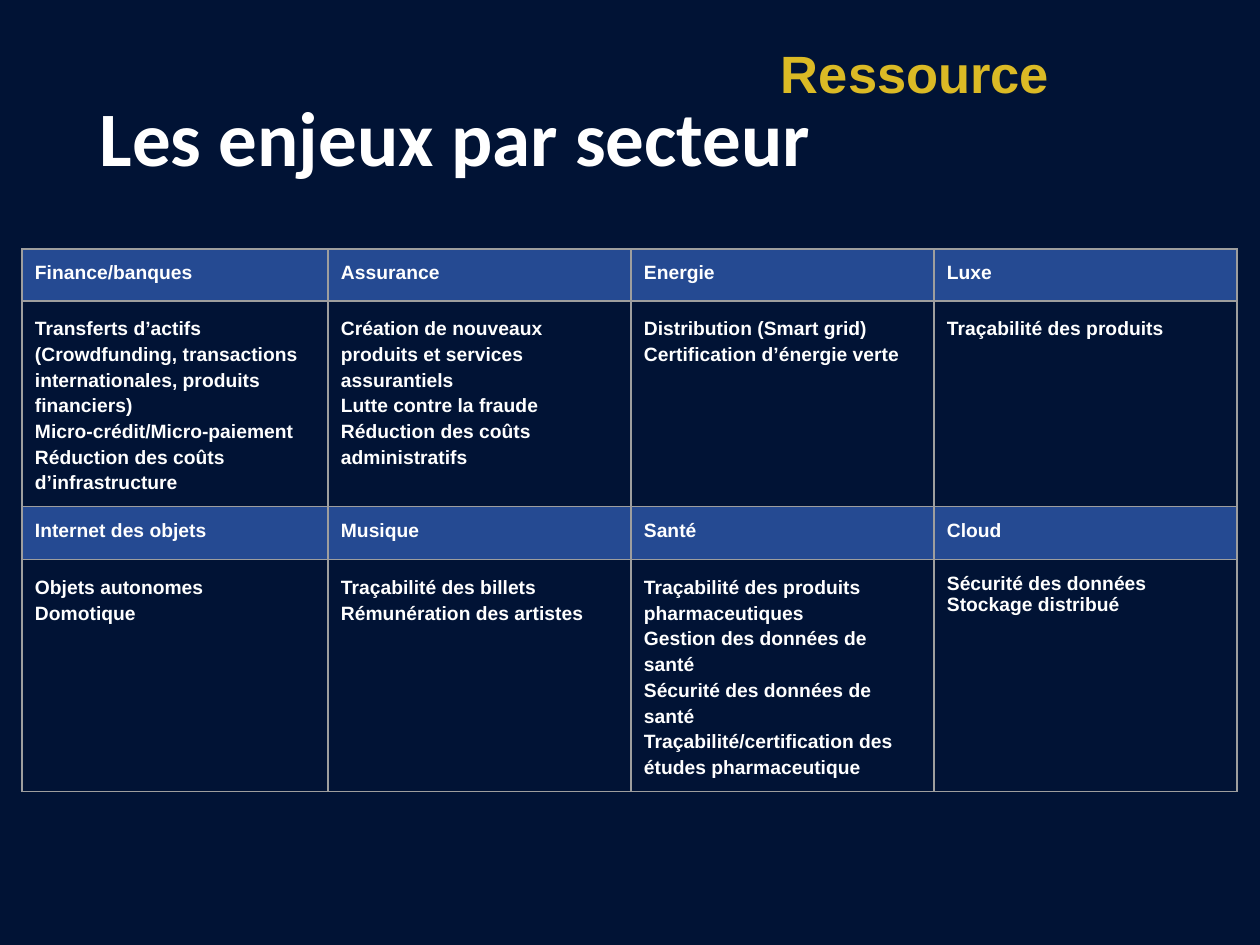
"""Build the slide on the stakes in each sector."""
from lxml import etree
from pptx import Presentation, util as u
from pptx.dml.color import RGBColor
from pptx.enum import text
from pptx.oxml.ns import qn

TITLE = "Les enjeux par secteur"
TAG = "Ressource"
SECTORS = [
    [
        ("Finance/banques", [
            "Transferts d’actifs (Crowdfunding, transactions internationales, produits financiers)",
            "Micro-crédit/Micro-paiement",
            "Réduction des coûts d’infrastructure"]),
        ("Assurance", [
            "Création de nouveaux produits et services assurantiels",
            "Lutte contre la fraude",
            "Réduction des coûts administratifs"]),
        ("Energie", ["Distribution (Smart grid)", "Certification d’énergie verte"]),
        ("Luxe", ["Traçabilité des produits"]),
    ],
    [
        ("Internet des objets", ["Objets autonomes", "Domotique"]),
        ("Musique", ["Traçabilité des billets", "Rémunération des artistes"]),
        ("Santé", [
            "Traçabilité des produits pharmaceutiques",
            "Gestion des données de santé",
            "Sécurité des données de santé",
            "Traçabilité/certification des études pharmaceutique"]),
        ("Cloud", ["Sécurité des données", "Stockage distribué"]),
    ],
]
TIGHT = "Cloud"
COLS = [306, 303, 303, 303]
ROWS = [52, 205, 53, 230]
HEX = {"back": "011335", "head": "254A92", "text": "FFFFFF", "tag": "DBBA25", "edge": "9E9E9E"}


def px(n):
    return u.Emu(round(n * 914400 / 126))


def tint(name):
    return RGBColor.from_string(HEX[name])


def style(frame, size, color="text", font="Arial", space=None):
    for para in frame.paragraphs:
        para.alignment = text.PP_ALIGN.LEFT
        if space:
            para.line_spacing = space
        for run in para.runs:
            run.font.name = font
            run.font.size = u.Pt(size)
            run.font.bold = True
            run.font.color.rgb = tint(color)


def pad(box, gap=13):
    box.margin_left = box.margin_right = box.margin_top = box.margin_bottom = px(gap)


def edge(cell):
    props = cell._tc.get_or_add_tcPr()
    for side in "LRTB":
        line = etree.SubElement(props, qn(f"a:ln{side}"), w=str(u.Pt(0.75)))
        fill = etree.SubElement(line, qn("a:solidFill"))
        etree.SubElement(fill, qn("a:srgbClr"), val=HEX["edge"])


def put(cell, words, head=False, space=None):
    cell.text_frame.text = words
    style(cell.text_frame, 11, space=space)
    pad(cell)
    edge(cell)
    if head:
        cell.fill.solid()
        cell.fill.fore_color.rgb = tint("head")
    else:
        cell.fill.background()


def add_grid(slide):
    frame = slide.shapes.add_table(len(ROWS), len(COLS), px(22), px(249),
                                   px(sum(COLS)), px(sum(ROWS)))
    grid = frame.table
    grid.first_row = grid.horz_banding = False
    for col, wide in zip(grid.columns, COLS):
        col.width = px(wide)
    for row, high in zip(grid.rows, ROWS):
        row.height = px(high)
    for band, group in enumerate(SECTORS):
        for col, (name, items) in enumerate(group):
            put(grid.cell(2 * band, col), name, head=True)
            put(grid.cell(2 * band + 1, col), "\n".join(items),
                space=None if name == TIGHT else 1.2)


def main():
    deck = Presentation()
    deck.slide_width, deck.slide_height = px(1260), px(945)
    slide = deck.slides.add_slide(deck.slide_layouts[5])
    slide.background.fill.solid()
    slide.background.fill.fore_color.rgb = tint("back")

    title = slide.shapes.title
    title.left, title.top, title.width, title.height = map(px, (87, 50, 1086, 183))
    frame = title.text_frame
    frame.text = TITLE
    frame.auto_size = text.MSO_AUTO_SIZE.NONE
    frame.vertical_anchor = text.MSO_ANCHOR.MIDDLE
    style(frame, 44, font="Calibri", space=0.9)

    add_grid(slide)

    tag = slide.shapes.add_textbox(*map(px, (768, 28, 314, 89))).text_frame
    tag.word_wrap = True
    tag.text = TAG
    pad(tag)
    style(tag, 30, color="tag")
    deck.save("out.pptx")


if __name__ == "__main__":
    main()
